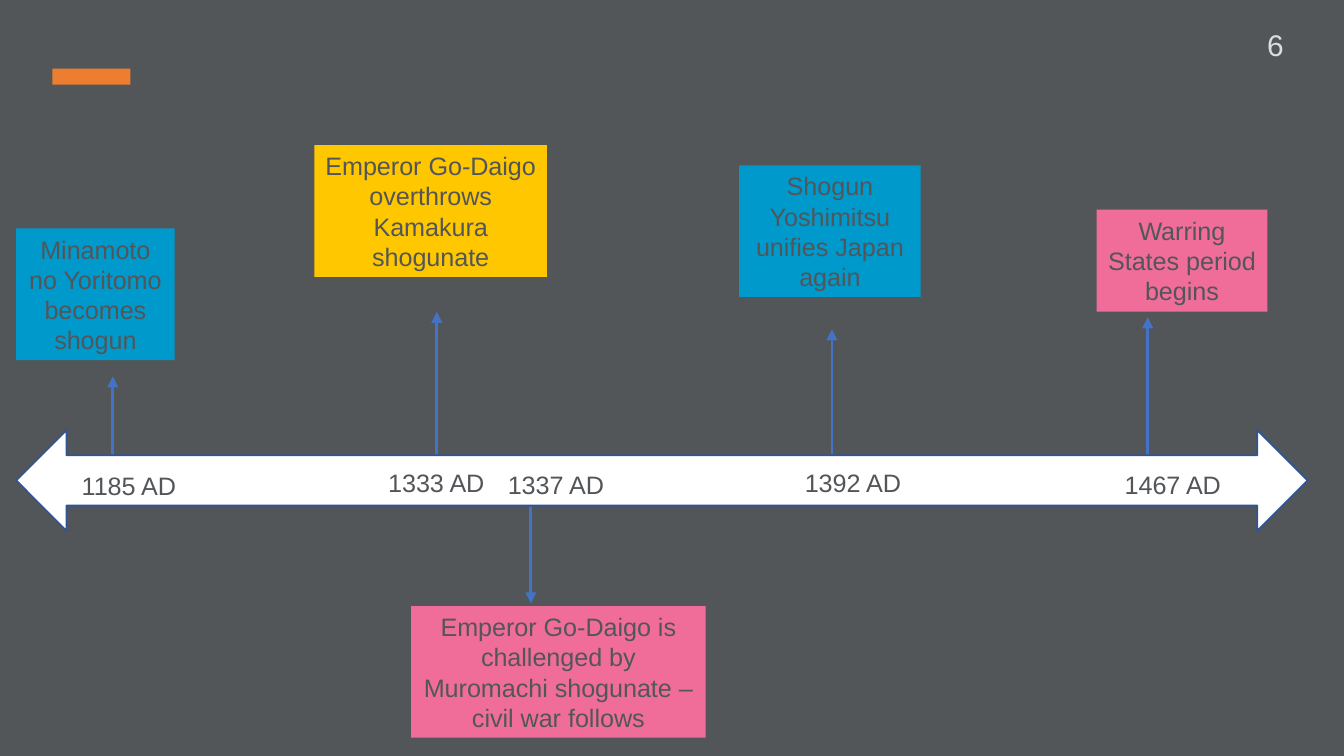
"""Build a timeline slide of the Japanese shogunates."""
from dataclasses import dataclass

from lxml import etree
from pptx import Presentation
from pptx.dml.color import RGBColor
from pptx.enum.shapes import MSO_CONNECTOR, MSO_SHAPE
from pptx.enum.text import MSO_ANCHOR, PP_ALIGN
from pptx.oxml.ns import qn
from pptx.util import Inches, Pt

RECTANGLE = MSO_SHAPE.RECTANGLE
DOUBLE_ARROW = MSO_SHAPE.LEFT_RIGHT_ARROW
STRAIGHT = MSO_CONNECTOR.STRAIGHT
LEFT, CENTER = PP_ALIGN.LEFT, PP_ALIGN.CENTER
TOP, MIDDLE = MSO_ANCHOR.TOP, MSO_ANCHOR.MIDDLE


@dataclass(frozen=True)
class Theme:
    """Colours, font and type sizes of the slide."""
    slate: str = "535659"
    orange: str = "ED7D31"
    blue: str = "0099CC"
    pink: str = "F16D99"
    yellow: str = "FFC700"
    white: str = "FFFFFF"
    pointer: str = "4472C4"
    outline: str = "325491"
    number: str = "DCDDDE"
    font: str = "Arial"
    body_size: float = 13.5
    number_size: float = 16


THEME = Theme()

EVENTS = [
    ("Minamoto no Yoritomo becomes shogun", THEME.blue, (0.12, 1.7, 1.18, 0.98)),
    ("Emperor Go-Daigo is challenged by Muromachi shogunate – civil war follows",
     THEME.pink, (3.06, 4.51, 2.19, 0.98)),
    ("Shogun Yoshimitsu unifies Japan again", THEME.blue, (5.5, 1.23, 1.35, 0.98)),
    ("Warring States period begins", THEME.pink, (8.16, 1.56, 1.27, 0.76)),
    ("Emperor Go-Daigo overthrows Kamakura shogunate", THEME.yellow, (2.34, 1.08, 1.73, 0.98)),
]
YEARS = [
    ("1392 AD", (5.89, 3.43, 1.1, 0.33)),
    ("1467 AD", (8.27, 3.44, 1.06, 0.33)),
    ("1337 AD", (3.68, 3.44, 1.1, 0.33)),
    ("1333 AD", (2.79, 3.43, 0.93, 0.33)),
    ("1185 AD", (0.51, 3.45, 1.1, 0.33)),
]
POINTERS = [
    (3.25, 3.41, 2.32),
    (6.19, 3.55, 2.45),
    (3.95, 3.74, 4.49),
    (0.84, 3.39, 2.8),
    (8.54, 3.46, 2.36),
]


def color(value):
    """Return the colour for a hex value."""
    return RGBColor.from_string(value)


def write(box, text, size=THEME.body_size, ink=THEME.slate, align=LEFT,
          anchor=TOP, inset=(0.1, 0.05)):
    """Put one formatted paragraph into a box."""
    frame = box.text_frame
    frame.word_wrap = True
    frame.vertical_anchor = anchor
    frame.margin_left = frame.margin_right = Inches(inset[0])
    frame.margin_top = frame.margin_bottom = Inches(inset[1])
    para = frame.paragraphs[0]
    para.alignment = align
    span = para.add_run()
    span.text = text
    span.font.name = THEME.font
    span.font.size = Pt(size)
    span.font.color.rgb = color(ink)


def add_block(page, kind, place, fill, outline=None):
    """Add a filled preset shape, outlined if a colour is given."""
    block = page.shapes.add_shape(kind, *map(Inches, place))
    block.shadow.inherit = False
    block.fill.solid()
    block.fill.fore_color.rgb = color(fill)
    if outline:
        block.line.color.rgb = color(outline)
        block.line.width = Pt(1)
    else:
        block.line.fill.background()
    return block


def add_label(page, text, place, **style):
    """Add a plain text box."""
    write(page.shapes.add_textbox(*map(Inches, place)), text, **style)


def add_event(page, text, fill, place):
    """Add a coloured event card."""
    card = add_block(page, RECTANGLE, place, fill)
    write(card, text, align=CENTER, anchor=MIDDLE, inset=(0.07, 0.04))


def add_pointer(page, x, start, end):
    """Add a vertical arrow from the timeline to an event."""
    pointer = page.shapes.add_connector(
        STRAIGHT, Inches(x), Inches(start), Inches(x), Inches(end))
    pointer.line.color.rgb = color(THEME.pointer)
    pointer.line.width = Pt(1.5)
    properties = pointer._element.spPr
    etree.SubElement(properties.find(qn("a:ln")), qn("a:tailEnd"), type="triangle")
    etree.SubElement(properties, qn("a:effectLst"))


def main():
    """Build and save the slide."""
    deck = Presentation()
    deck.slide_width = Inches(10)
    deck.slide_height = Inches(10 * 9 / 16)
    page = deck.slides.add_slide(deck.slide_layouts[6])
    page.background.fill.solid()
    page.background.fill.fore_color.rgb = color(THEME.slate)

    add_block(page, RECTANGLE, (0.39, 0.51, 0.58, 0.12), THEME.orange)
    for pointer in POINTERS:
        add_pointer(page, *pointer)
    add_block(page, DOUBLE_ARROW, (0.12, 3.2, 9.61, 0.75), THEME.white, THEME.outline)
    for event in EVENTS:
        add_event(page, *event)
    for year in YEARS:
        add_label(page, *year)
    add_label(page, "6", (9.33, 0.15, 0.63, 0.37),
              size=THEME.number_size, ink=THEME.number)
    deck.save("out.pptx")


if __name__ == "__main__":
    main()
